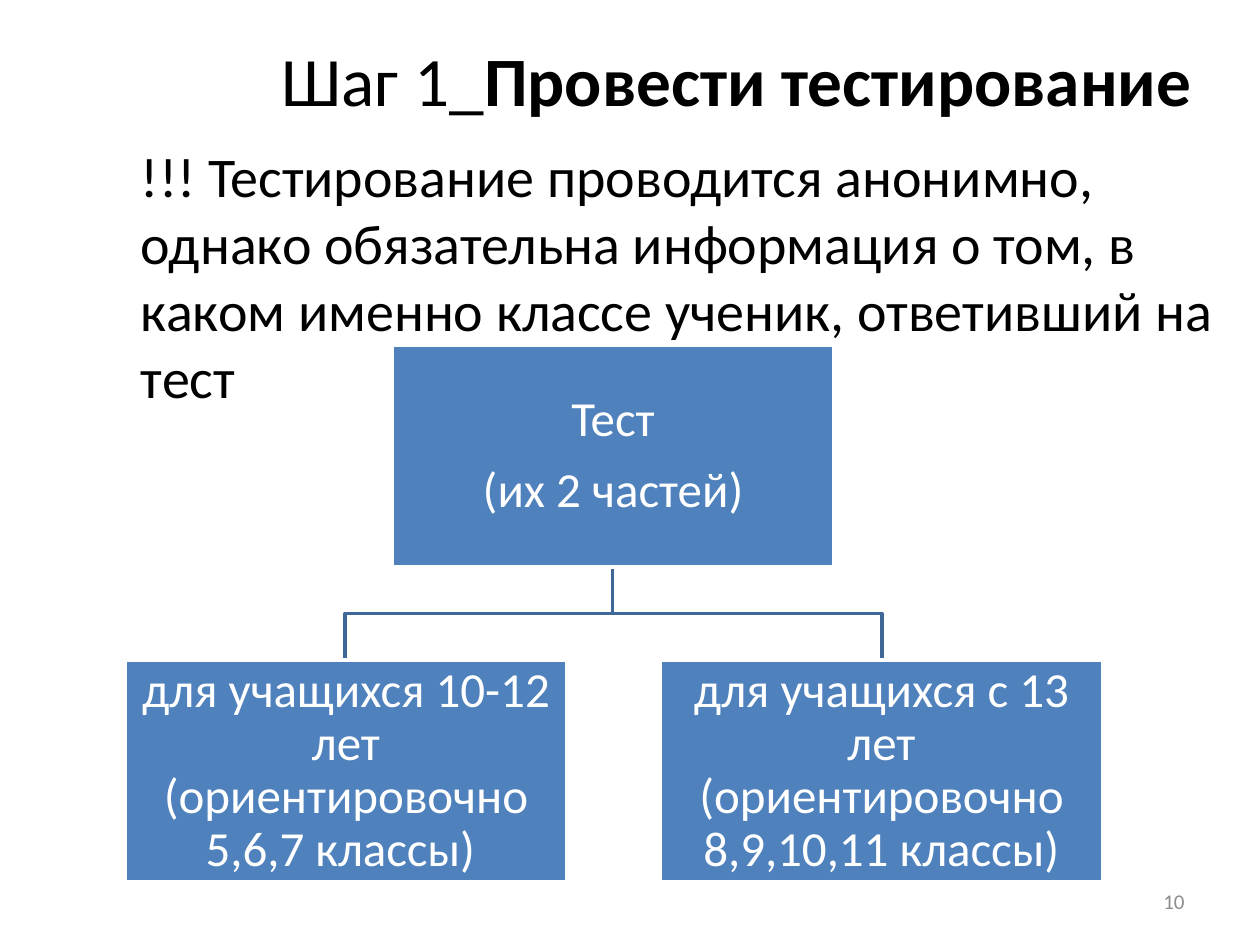
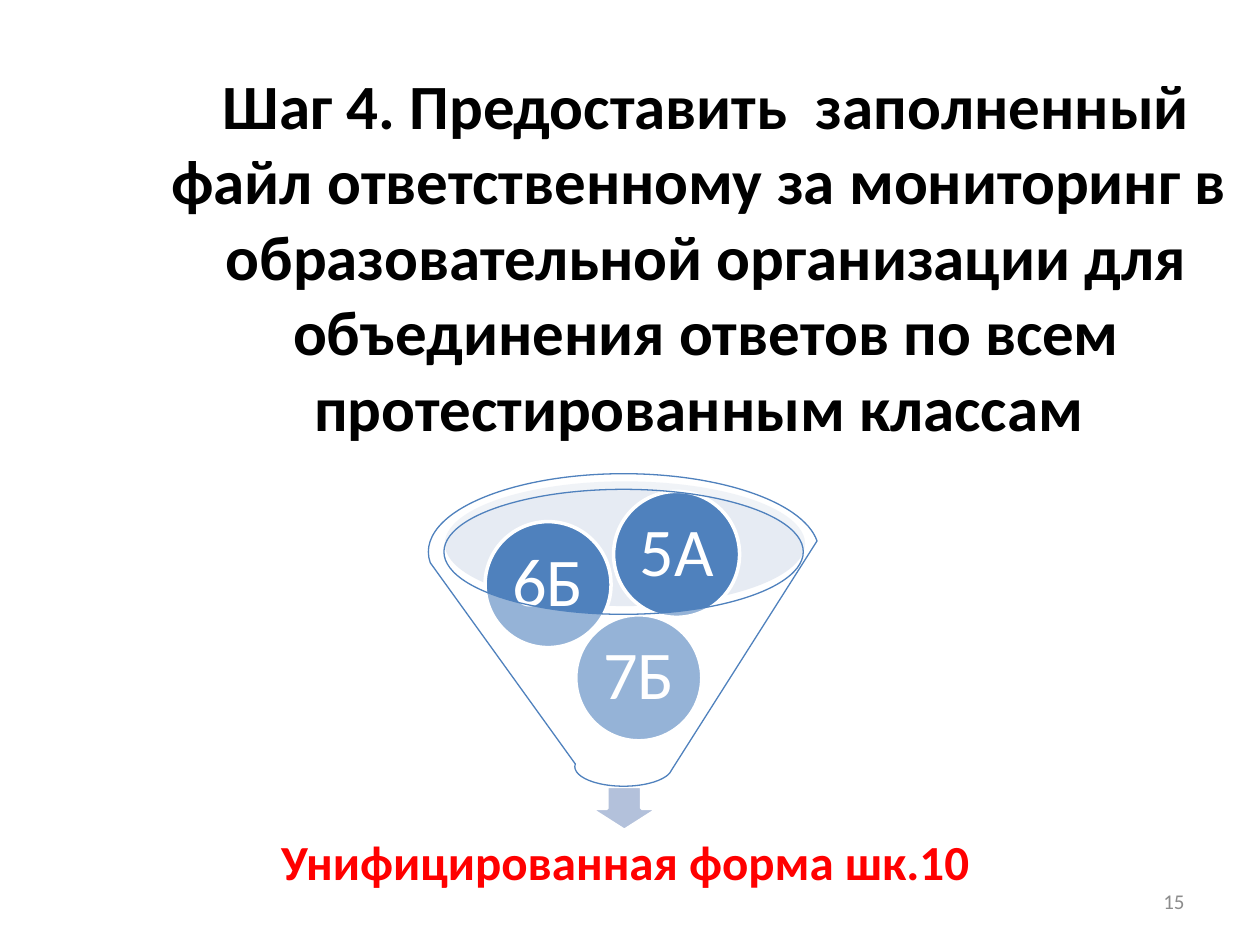
from lxml import etree
from pptx import Presentation
from pptx import util as u
from pptx.dml.color import RGBColor
from pptx.enum import shapes, text
from pptx.oxml.ns import qn

PX = 9144  # EMU per px, 100 px to the inch
FONT = "Calibri"
COLORS = {
    "text": "000000", "white": "FFFFFF", "blue": "4F81BD", "elbow": "3F6797",
    "arrow": "B3C1DB", "mouth": "C2CDE1", "alert": "FF0000", "number": "8C8C8C",
}
SHAPE = shapes.MSO_SHAPE
ALIGN = text.PP_ALIGN
ANCHOR = text.MSO_ANCHOR


def px(*values):
    return [round(v * PX) for v in values]


def rgb(name):
    return RGBColor.from_string(COLORS[name])


class Deck:
    def __init__(self, width, height):
        self.prs = Presentation()
        self.prs.slide_width, self.prs.slide_height = px(width, height)
        self.s = None

    def slide(self, number):
        self.s = self.prs.slides.add_slide(self.prs.slide_layouts[6])
        self.label((717, 695, 233, 40), [str(number)], 12, "number",
                   align=ALIGN.RIGHT)

    def set_text(self, tf, lines, size, color, bold=False, bold_tail="",
                 align=ALIGN.CENTER, anchor=ANCHOR.MIDDLE, insets=(10, 5, 10, 5),
                 spacing=1.0, after=0):
        tf.word_wrap = True
        tf.vertical_anchor = anchor
        tf.margin_left, tf.margin_top, tf.margin_right, tf.margin_bottom = px(*insets)
        tf.text = "\n".join(lines)
        if bold_tail:
            tf.paragraphs[-1].add_run().text = bold_tail
        for p in tf.paragraphs:
            p.alignment = align
            p.line_spacing = spacing
            p.space_after = u.Pt(after)
            for r in p.runs:
                r.font.name = FONT
                r.font.size = u.Pt(size)
                r.font.bold = bold or r.text == bold_tail
                r.font.color.rgb = rgb(color)

    def label(self, box, lines, size, color="text", **style):
        sp = self.s.shapes.add_textbox(*px(*box))
        self.set_text(sp.text_frame, lines, size, color, **style)

    def title(self, box, line, size, **style):
        # The deep bottom inset lifts the title above the middle of its box
        self.label(box, [line], size, insets=(10, 5, 10, 65), **style)

    def shape(self, kind, box, fill, line=None, width=2, alpha=None):
        sp = self.s.shapes.add_shape(kind, *px(*box))
        sp.shadow.inherit = False
        sp.fill.solid()
        sp.fill.fore_color.rgb = rgb(fill)
        if alpha:
            clr = sp.element.spPr.find(qn("a:solidFill"))[0]
            etree.SubElement(clr, qn("a:alpha")).set("val", str(alpha * 1000))
        if line:
            sp.line.color.rgb = rgb(line)
            sp.line.width = u.Pt(width)
        else:
            sp.line.fill.background()
        return sp

    def node(self, kind, box, lines, size, inset):
        sp = self.shape(kind, box, "blue", "white")
        self.set_text(sp.text_frame, lines, size, "white", insets=(inset,) * 4,
                      spacing=0.9, after=round(size * 0.35))

    def elbow(self, start, end):
        (x1, y1), (x2, y2) = start, end
        middle = (y1 + y2) / 2
        fb = self.s.shapes.build_freeform(x1, y1, scale=PX)
        fb.add_line_segments([(x1, middle), (x2, middle), (x2, y2)], close=False)
        sp = fb.convert_to_shape()
        sp.shadow.inherit = False
        sp.fill.background()
        sp.line.color.rgb = rgb("elbow")
        sp.line.width = u.Pt(2)


def testing_slide(d):
    d.slide(10)
    d.title((209, 30, 764, 125), "Шаг 1_", 39.6, bold_tail="Провести тестирование ")
    d.label((102, 107, 899, 205),
            ["!!! Тестирование проводится анонимно, однако обязательна информация "
             "о том, в каком именно классе ученик, ответивший на тест"],
            32, align=ALIGN.LEFT, anchor=ANCHOR.TOP)

    # Test and its two age groups
    node_w, node_h = 351, 176
    root_x, root_y, group_y = 311, 274, 524
    groups = [
        (99, "для учащихся 10-12 лет (ориентировочно 5,6,7 классы) "),
        (524, "для учащихся с 13 лет (ориентировочно 8,9,10,11 классы)"),
    ]
    for x, _ in groups:
        d.elbow((root_x + node_w / 2, root_y + node_h), (x + node_w / 2, group_y))
    d.node(SHAPE.RECTANGLE, (root_x, root_y, node_w, node_h),
           ["Тест", "(их 2 частей)"], 28, 2)
    for x, group in groups:
        d.node(SHAPE.RECTANGLE, (x, group_y, node_w, node_h), [group], 28, 2)


def merging_slide(d):
    d.slide(15)
    d.title((122, 170, 877, 125),
            "Шаг 4. Предоставить  заполненный файл ответственному за мониторинг в  "
            "образовательной организации для объединения ответов по всем "
            "протестированным классам ", 36, bold=True)

    # Classes falling through the funnel into one form
    d.shape(SHAPE.OVAL, (353, 382, 286, 99), "mouth", alpha=40)
    d.shape(SHAPE.DOWN_ARROW, (468, 624, 55, 35), "arrow", "white")
    d.label((70, 653, 852, 66), ["Унифицированная форма шк.10"], 28, "alert",
            bold=True, insets=(22,) * 4, spacing=0.9, after=10)
    for x, y, grade in [(457, 488, "7Б"), (385, 414, "6Б"), (487, 390, "5А")]:
        d.node(SHAPE.OVAL, (x, y, 100, 100), [grade], 39, 5)
    d.shape(SHAPE.FUNNEL, (340, 376, 310, 248), "white", "blue", 0.75, alpha=40)


def main():
    d = Deck(1000, 750)
    testing_slide(d)
    merging_slide(d)
    d.prs.save("out.pptx")


if __name__ == "__main__":
    main()
